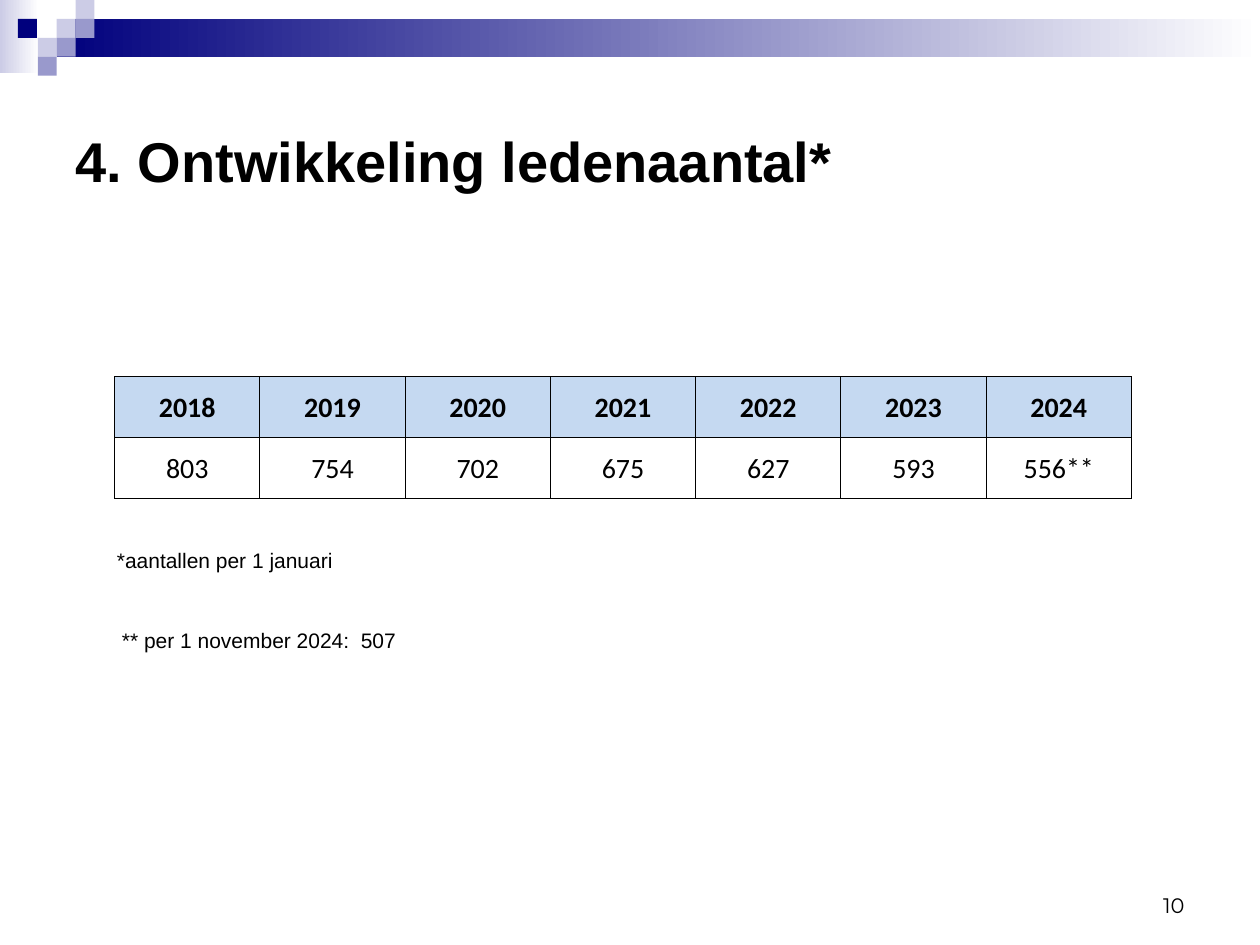
from dataclasses import dataclass

from lxml.etree import SubElement
from pptx import Presentation
from pptx.dml.color import RGBColor
from pptx.enum.shapes import MSO_SHAPE as Shape
from pptx.enum.text import MSO_ANCHOR as Anchor, PP_ALIGN as Align
from pptx.oxml.ns import qn
from pptx.util import Inches, Pt


@dataclass(frozen=True)
class Theme:
    """Colours, fonts and type sizes of the slide."""
    black: str = "000000"
    white: str = "FFFFFF"
    navy: str = "00007D"
    lavender: str = "CCCCE6"
    violet: str = "9999CC"
    header: str = "C5D9F1"
    text_font: str = "Arial"
    table_font: str = "Calibri"
    number_font: str = "Montserrat"
    title_size: int = 32
    table_size: int = 16
    small_size: int = 12
    border_width: float = 0.5


THEME = Theme()
MEMBERS = {
    "2018": "803", "2019": "754", "2020": "702", "2021": "675",
    "2022": "627", "2023": "593", "2024": "556**",
}


def color(value):
    """Turn a hex string into a colour."""
    return RGBColor.from_string(value)


def write(text_frame, text, font, size, bold=False, align=Align.LEFT):
    """Set one line of text and format it."""
    text_frame.text = text
    paragraph = text_frame.paragraphs[0]
    paragraph.alignment = align
    run_font = paragraph.runs[0].font
    run_font.name, run_font.size, run_font.bold = font, Pt(size), bold
    run_font.color.rgb = color(THEME.black)


def add_block(slide, left, top, width, height, start, end=None):
    """Add a borderless rectangle, solid or fading to the right."""
    block = slide.shapes.add_shape(
        Shape.RECTANGLE, Inches(left), Inches(top), Inches(width), Inches(height))
    block.shadow.inherit = False
    block.line.fill.background()
    if end is None:
        block.fill.solid()
        block.fill.fore_color.rgb = color(start)
        return
    block.fill.gradient()
    block.fill.gradient_angle = 0
    for stop, value in zip(block.fill.gradient_stops, (start, end)):
        stop.color.rgb = color(value)


def add_banner(slide, left, top, width, unit):
    """Draw the fading bar and its mosaic on a square grid."""
    add_block(slide, left, top, 0.31, 0.58, THEME.lavender, THEME.white)
    add_block(slide, left + 3 * unit, top + unit, width - 3 * unit, 2 * unit,
              THEME.navy, THEME.white)
    mosaic = {
        THEME.lavender: [(3, 1), (4, 0), (2, 2)],
        THEME.violet: [(4, 1), (3, 2), (2, 3)],
        THEME.navy: [(0.95, 1)],
    }
    for fill, cells in mosaic.items():
        for column, row in cells:
            add_block(slide, left + column * unit, top + row * unit, unit, unit, fill)


def add_title(slide, left, top, width, height, text):
    """Place and fill the title placeholder."""
    title = slide.shapes.title
    title.left, title.top = Inches(left), Inches(top)
    title.width, title.height = Inches(width), Inches(height)
    title.text_frame.vertical_anchor = Anchor.MIDDLE
    write(title.text_frame, text, THEME.text_font, THEME.title_size, bold=True)


def add_text(slide, left, top, width, height, text, font=THEME.text_font,
             align=Align.LEFT, anchor=Anchor.TOP):
    """Add a small line of text."""
    box = slide.shapes.add_textbox(
        Inches(left), Inches(top), Inches(width), Inches(height))
    box.text_frame.word_wrap = True
    box.text_frame.vertical_anchor = anchor
    write(box.text_frame, text, font, THEME.small_size, align=align)


def set_borders(cell):
    """Draw a thin line on all four sides of a cell."""
    properties = cell._tc.get_or_add_tcPr()
    for index, side in enumerate(("lnL", "lnR", "lnT", "lnB")):
        line = properties.makeelement(
            qn(f"a:{side}"), {"w": str(Pt(THEME.border_width))})
        fill = SubElement(line, qn("a:solidFill"))
        SubElement(fill, qn("a:srgbClr"), val=THEME.black)
        properties.insert(index, line)


def add_member_table(slide, left, top, width, height, members):
    """Add the table with a row of years above a row of counts."""
    table = slide.shapes.add_table(
        2, len(members), Inches(left), Inches(top), Inches(width), Inches(height)).table
    table.horz_banding = False
    for row, values in enumerate((members.keys(), members.values())):
        is_header = row == 0
        for column, value in enumerate(values):
            cell = table.cell(row, column)
            cell.margin_left = cell.margin_right = cell.margin_top = Inches(0.01)
            cell.margin_bottom = 0
            cell.vertical_anchor = Anchor.MIDDLE
            cell.fill.solid()
            cell.fill.fore_color.rgb = color(THEME.header if is_header else THEME.white)
            write(cell.text_frame, value, THEME.table_font, THEME.table_size,
                  bold=is_header, align=Align.CENTER)
            set_borders(cell)


def main():
    """Build the slide and save it."""
    presentation = Presentation()
    presentation.slide_width, presentation.slide_height = Inches(10), Inches(7.5)
    slide = presentation.slides.add_slide(presentation.slide_layouts[5])
    add_banner(slide, 0, 0, 10, 0.15)
    add_text(slide, 7.17, 6.83, 2.33, 0.5, "10", THEME.number_font,
             Align.RIGHT, Anchor.BOTTOM)
    add_title(slide, 0.5, 0.52, 9, 1.5, "4. Ontwikkeling ledenaantal*")
    add_text(slide, 0.83, 4.3, 2.2, 0.3, "*aantallen per 1 januari")
    add_member_table(slide, 0.91, 2.99, 8.07, 0.97, MEMBERS)
    add_text(slide, 0.87, 4.93, 2.47, 0.3, "** per 1 november 2024:  507")
    presentation.save("out.pptx")


if __name__ == "__main__":
    main()
